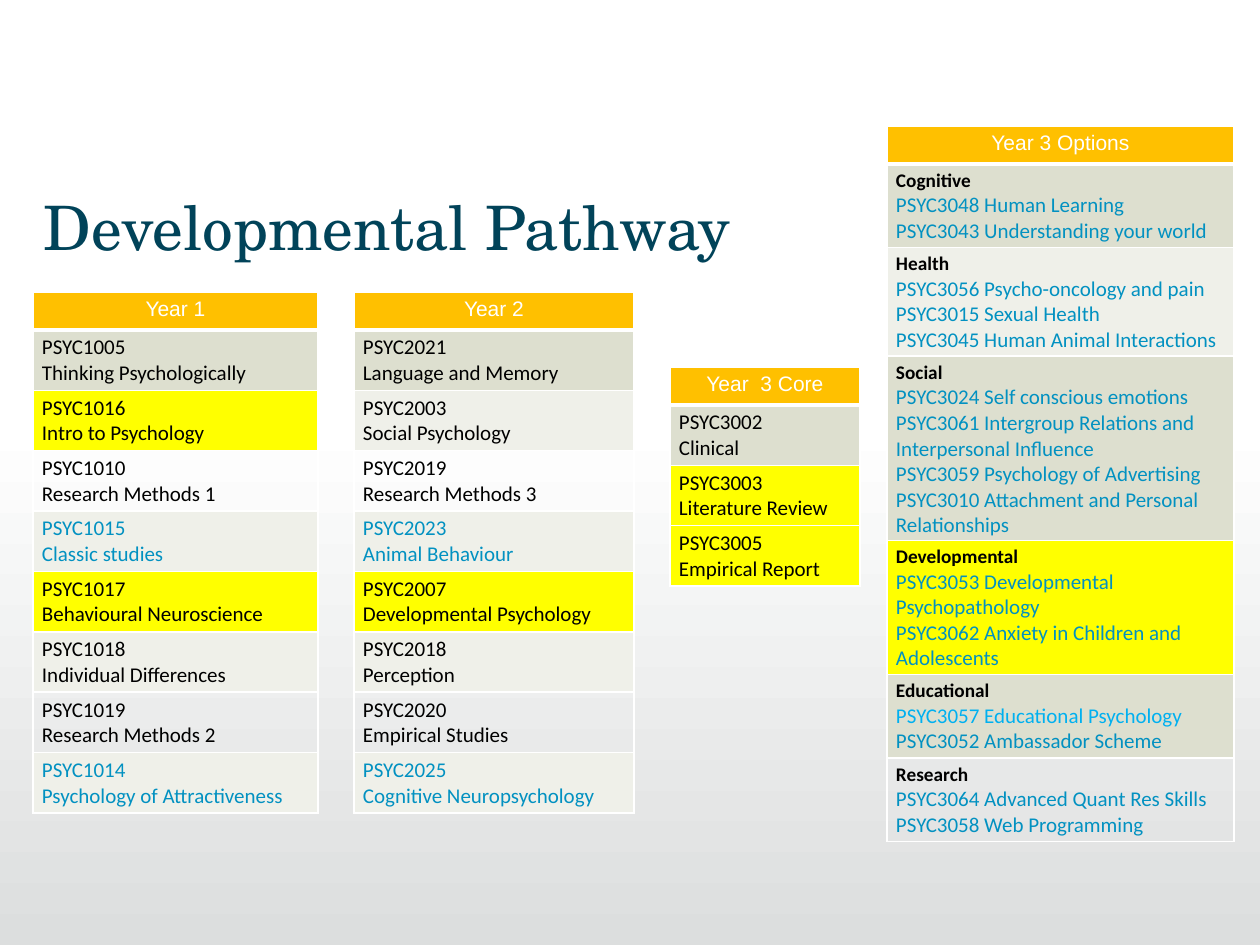
from lxml.etree import SubElement
from pptx import Presentation
from pptx.dml.color import RGBColor
from pptx.enum.shapes import MSO_SHAPE
from pptx.enum.text import MSO_ANCHOR, PP_ALIGN
from pptx.oxml.ns import qn
from pptx.util import Emu, Pt

WHITE = RGBColor(0xFF, 0xFF, 0xFF)
BLACK = RGBColor(0, 0, 0)
MIST = RGBColor(0xDC, 0xDE, 0xDE)
NAVY = RGBColor(0x01, 0x43, 0x59)
AMBER = RGBColor(0xFF, 0xC0, 0x00)
YELLOW = RGBColor(0xFF, 0xFF, 0x00)
SAGE = RGBColor(0xDD, 0xDF, 0xCF)
PALE = RGBColor(0xEF, 0xF0, 0xE9)
TEAL = RGBColor(0x02, 0x91, 0xC1)
SKY = RGBColor(0x00, 0xB0, 0xF0)

HEADER_HEIGHT = 38
MODULE_HEIGHT = 59

YEAR_1 = [
    (SAGE, BLACK, "PSYC1005", "Thinking Psychologically"),
    (YELLOW, BLACK, "PSYC1016", "Intro to Psychology"),
    (None, BLACK, "PSYC1010", "Research Methods 1"),
    (PALE, TEAL, "PSYC1015", "Classic studies"),
    (YELLOW, BLACK, "PSYC1017", "Behavioural Neuroscience"),
    (PALE, BLACK, "PSYC1018", "Individual Differences"),
    (None, BLACK, "PSYC1019", "Research Methods 2"),
    (PALE, TEAL, "PSYC1014", "Psychology of Attractiveness"),
]
YEAR_2 = [
    (SAGE, BLACK, "PSYC2021", "Language and Memory"),
    (PALE, BLACK, "PSYC2003", "Social Psychology"),
    (None, BLACK, "PSYC2019", "Research Methods 3"),
    (PALE, TEAL, "PSYC2023", "Animal Behaviour"),
    (YELLOW, BLACK, "PSYC2007", "Developmental Psychology"),
    (PALE, BLACK, "PSYC2018", "Perception"),
    (None, BLACK, "PSYC2020", "Empirical Studies"),
    (PALE, TEAL, "PSYC2025", "Cognitive Neuropsychology"),
]
YEAR_3_CORE = [
    (SAGE, BLACK, "PSYC3002", "Clinical"),
    (YELLOW, BLACK, "PSYC3003", "Literature Review"),
    (YELLOW, BLACK, "PSYC3005", "Empirical Report"),
]
YEAR_3_OPTIONS = [
    (SAGE, 82, "Cognitive", [
        ("PSYC3048 Human Learning", TEAL),
        ("PSYC3043 Understanding your world", TEAL)]),
    (PALE, 107, "Health", [
        ("PSYC3056 Psycho-oncology and pain", TEAL),
        ("PSYC3015 Sexual Health", TEAL),
        ("PSYC3045 Human Animal Interactions", TEAL)]),
    (SAGE, 183, "Social", [
        ("PSYC3024 Self conscious emotions", TEAL),
        ("PSYC3061 Intergroup Relations and Interpersonal Influence", TEAL),
        ("PSYC3059 Psychology of Advertising", TEAL),
        ("PSYC3010 Attachment and Personal Relationships", TEAL)]),
    (YELLOW, 132, "Developmental", [
        ("PSYC3053 Developmental Psychopathology", TEAL),
        ("PSYC3062 Anxiety in Children and Adolescents", TEAL)]),
    (SAGE, 82, "Educational", [
        ("PSYC3057 Educational Psychology", SKY),
        ("PSYC3052 Ambassador Scheme", TEAL)]),
    (None, 82, "Research", [
        ("PSYC3064 Advanced Quant Res Skills", TEAL),
        ("PSYC3058 Web Programming", TEAL)]),
]


def px(length):
    return Emu(round(length * 914400 / 126))


def style_paragraph(paragraph, text, size, font_name, colour, bold=False):
    paragraph.text = text
    font = paragraph.font
    font.size = Pt(size)
    font.name = font_name
    font.bold = bold
    font.color.rgb = colour


def add_backdrop(slide, left, top, width, height):
    shape = slide.shapes.add_shape(
        MSO_SHAPE.RECTANGLE, px(left), px(top), px(width), px(height))
    shape.shadow.inherit = False
    shape.line.fill.background()
    shape.fill.gradient()
    shape.fill.gradient_angle = 270
    for stop, colour, position in zip(shape.fill.gradient_stops, (WHITE, MIST), (0, 1)):
        stop.color.rgb = colour
        stop.position = position


def add_title(slide, left, top, width, height):
    box = slide.shapes.add_textbox(px(left), px(top), px(width), px(height))
    frame = box.text_frame
    frame.word_wrap = True
    frame.vertical_anchor = MSO_ANCHOR.TOP
    frame.margin_left = 0
    style_paragraph(frame.paragraphs[0], "Developmental Pathway", 35, "TeX Gyre Schola", NAVY)


def set_borders(cell, bottom_width):
    properties = cell._tc.get_or_add_tcPr()
    widths = {"a:lnL": 1, "a:lnR": 1, "a:lnT": 1, "a:lnB": bottom_width}
    for tag, width in widths.items():
        line = SubElement(properties, qn(tag), w=str(Pt(width)))
        fill = SubElement(line, qn("a:solidFill"))
        SubElement(fill, qn("a:srgbClr"), val=str(WHITE))


def fill_cell(cell, fill, lines, bottom_width=1, alignment=PP_ALIGN.LEFT):
    cell.margin_left = cell.margin_right = px(9)
    cell.margin_top = cell.margin_bottom = px(5)
    set_borders(cell, bottom_width)
    if fill is None:
        cell.fill.background()
    else:
        cell.fill.solid()
        cell.fill.fore_color.rgb = fill
    frame = cell.text_frame
    for index, line in enumerate(lines):
        paragraph = frame.add_paragraph() if index else frame.paragraphs[0]
        style_paragraph(paragraph, *line)
        paragraph.alignment = alignment


def add_column(slide, left, top, width, heading, rows):
    heights = [HEADER_HEIGHT] + [height for _, height, _ in rows]
    table = slide.shapes.add_table(
        len(heights), 1, px(left), px(top), px(width), px(sum(heights))).table
    table.horz_banding = False
    for row, height in zip(table.rows, heights):
        row.height = px(height)
    fill_cell(table.cell(0, 0), AMBER, [(heading, 12, "Arial", WHITE)], 3, PP_ALIGN.CENTER)
    for index, (fill, _, lines) in enumerate(rows, start=1):
        fill_cell(table.cell(index, 0), fill, lines)


def add_modules(slide, left, top, width, heading, modules):
    rows = [(fill, MODULE_HEIGHT, [(text, 12, "Calibri", colour) for text in texts])
            for fill, colour, *texts in modules]
    add_column(slide, left, top, width, heading, rows)


def add_options(slide, left, top, width, heading, themes):
    rows = [(fill, height, [(theme, 11, "Calibri", BLACK, True)]
             + [(text, 12, "Calibri", colour) for text, colour in options])
            for fill, height, theme, options in themes]
    add_column(slide, left, top, width, heading, rows)


def main():
    presentation = Presentation()
    presentation.slide_width = px(1260)
    presentation.slide_height = px(945)
    slide = presentation.slides.add_slide(presentation.slide_layouts[6])
    add_backdrop(slide, -11, 420, 1271, 525)
    add_title(slide, 44, 183, 1170, 67)
    add_modules(slide, 33, 292, 285, "Year 1", YEAR_1)
    add_modules(slide, 354, 292, 280, "Year 2", YEAR_2)
    add_modules(slide, 670, 367, 190, "Year  3 Core", YEAR_3_CORE)
    add_options(slide, 887, 126, 347, "Year 3 Options", YEAR_3_OPTIONS)
    presentation.save("out.pptx")


if __name__ == "__main__":
    main()
